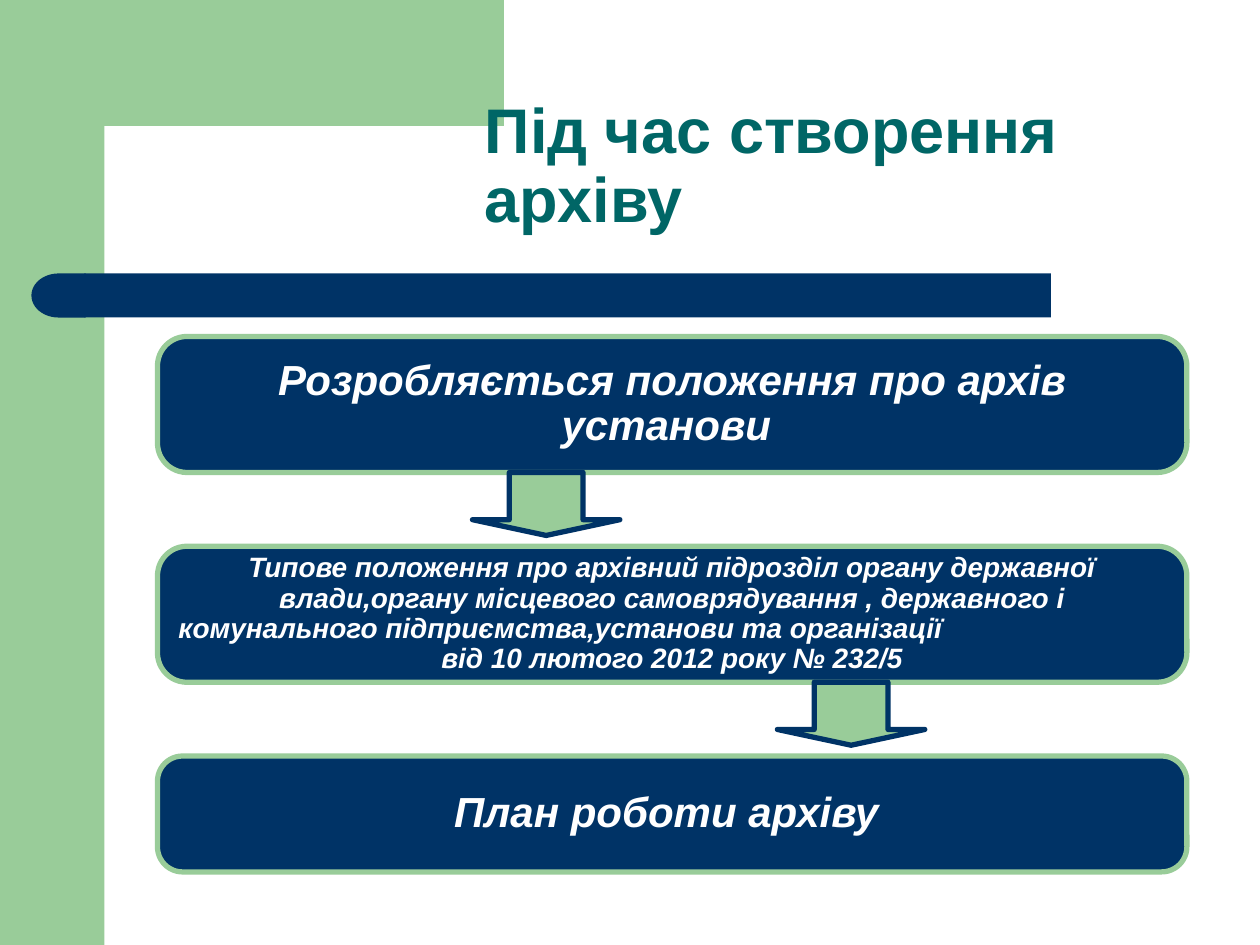
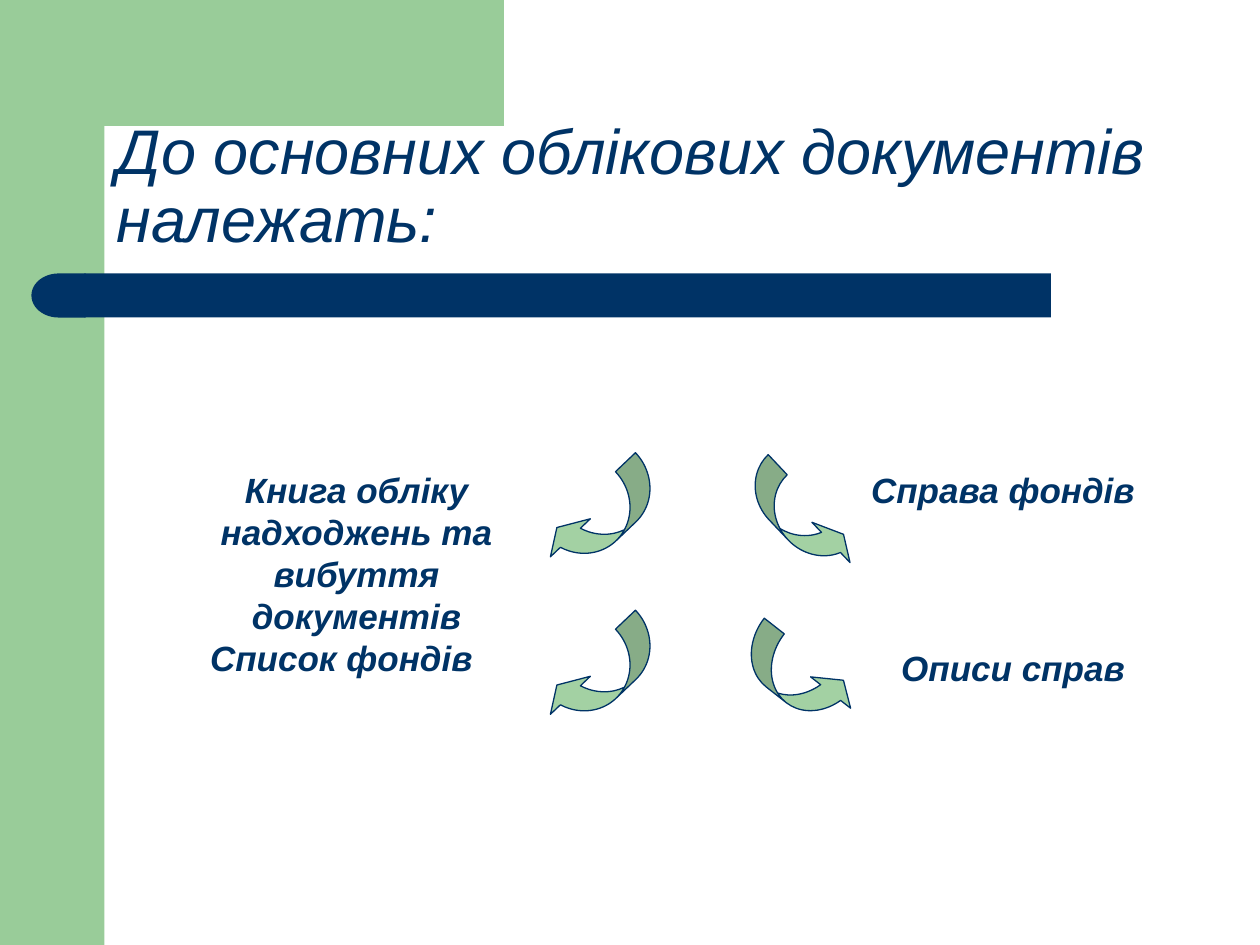
from math import cos, pi, sin

from lxml.etree import SubElement
from pptx import Presentation
from pptx.dml.color import RGBColor
from pptx.enum.shapes import MSO_SHAPE
from pptx.enum.text import MSO_ANCHOR, PP_ALIGN
from pptx.oxml.ns import qn
from pptx.util import Inches, Pt

COLORS = {"green": "99CC99", "navy": "003366", "teal": "006666", "white": "FFFFFF"}
FONT = "Arial"
WIDTH, HEIGHT = 10, 7.5
SIDE = 0.83
CORNER_RADIUS = 0.33
CENTER, LEFT = PP_ALIGN.CENTER, PP_ALIGN.LEFT

CREATION = {
    "title": "Під час створення архіву",
    "title_at": (3.75, 0.25, 5.92, 1.67),
    "title_style": {"color": "teal", "bold": True},
    "steps": [
        {"lines": [("Розробляється положення про архів установи ", CENTER)],
         "size": 24, "height": 1.08, "arrow_left": 3.75},
        {"lines": [
            ("Типове положення про архівний підрозділ органу державної влади,"
             "органу місцевого самоврядування , державного і", CENTER),
            ("комунального підприємства,установи та організації", LEFT),
            ("від 10 лютого 2012 року № 232/5", CENTER)],
         "size": 16, "height": 1.08, "arrow_left": 6.17},
        {"lines": [("План роботи архіву ", CENTER)],
         "size": 24, "height": 0.92, "arrow_left": None},
    ],
}
STEP_LEFT, STEP_TOP, STEP_WIDTH, STEP_PITCH = 1.25, 2.67, 8.17, 1.665
STEP_ARROW = (1.17, 0.5)

RECORDS = {
    "title": "До основних облікових документів належать:",
    "title_at": (SIDE, 0.83, 9.17, 1.25),
    "title_style": {"color": "navy", "italic": True},
    "documents": [
        {"name": "Книга обліку надходжень та вибуття документів",
         "at": (1.33, 3.67, 3, 0.67), "arrow_at": (4.59, 3.57, 0.4, 1.08),
         "turn": 46.4, "bend": 0.547, "mirrored": False},
        {"name": "Список фондів",
         "at": (1, 5, 3.42, 1), "arrow_at": (4.59, 4.82, 0.4, 1.08),
         "turn": 46.4, "bend": 0.547, "mirrored": False},
        {"name": "Справа фондів",
         "at": (6.17, 3.67, 3.58, 0.58), "arrow_at": (6.17, 3.58, 0.35, 1.09),
         "turn": 316.6, "bend": 0.628, "mirrored": True},
        {"name": "Описи справ",
         "at": (6.25, 5.08, 3.58, 0.42), "arrow_at": (6.12, 4.88, 0.42, 1),
         "turn": 308.1, "bend": 0.48, "mirrored": True},
    ],
}


def rgb(color):
    return RGBColor.from_string(COLORS[color])


def paint(shape, fill, line=None, line_width=0):
    shape.shadow.inherit = False
    shape.fill.solid()
    shape.fill.fore_color.rgb = rgb(fill)
    if line:
        shape.line.color.rgb = rgb(line)
        shape.line.width = Pt(line_width)
    else:
        shape.line.fill.background()


def add_figure(slide, kind, at, fill, line=None, line_width=0, adjustments=()):
    figure = slide.shapes.add_shape(kind, *map(Inches, at))
    paint(figure, fill, line, line_width)
    for index, value in enumerate(adjustments):
        figure.adjustments[index] = value
    return figure


def mirror(shape):
    shape._element.spPr.find(qn("a:xfrm")).set("flipH", "1")


def write(shape, lines, size, color, anchor, bold=False, italic=False, spacing=None):
    frame = shape.text_frame
    frame.word_wrap = True
    frame.vertical_anchor = anchor
    frame.text = "\n".join(text for text, _ in lines)
    for paragraph, (_, align) in zip(frame.paragraphs, lines):
        paragraph.alignment = align
        paragraph.line_spacing = spacing
        for run in paragraph.runs:
            run.font.name = FONT
            run.font.size = Pt(size)
            run.font.color.rgb = rgb(color)
            run.font.bold = bold
            run.font.italic = italic


def add_text(slide, at, *args, **style):
    write(slide.shapes.add_textbox(*map(Inches, at)), *args, **style)


def add_frame(slide):
    add_figure(slide, MSO_SHAPE.RECTANGLE, (0, 0, SIDE, HEIGHT), "green")
    center = SIDE + CORNER_RADIUS
    angles = [pi / 2 * step / 12 for step in range(13)]
    arc = [(center - CORNER_RADIUS * sin(a), center - CORNER_RADIUS * cos(a)) for a in angles]
    outline = [(3.5, 0), (3.5, SIDE), *arc, (SIDE, 1.28), (0.5, 1.28), (0.5, 0)]
    builder = slide.shapes.build_freeform(*outline[0], scale=Inches(1))
    builder.add_line_segments(outline[1:], close=True)
    paint(builder.convert_to_shape(), "green")
    add_figure(slide, MSO_SHAPE.RECTANGLE, (0.67, 2.17, 7.67, 0.35), "navy")
    mirror(add_figure(slide, MSO_SHAPE.FLOWCHART_DELAY, (0.25, 2.17, 0.43, 0.35), "navy"))


def start_slide(deck, content):
    slide = deck.slides.add_slide(deck.slide_layouts[6])
    add_frame(slide)
    add_text(slide, content["title_at"], [(content["title"], LEFT)], 36,
             anchor=MSO_ANCHOR.BOTTOM, spacing=0.9, **content["title_style"])
    return slide


def build_creation(deck):
    slide = start_slide(deck, CREATION)
    for index, step in enumerate(CREATION["steps"]):
        top = STEP_TOP + index * STEP_PITCH
        box = add_figure(slide, MSO_SHAPE.ROUNDED_RECTANGLE,
                         (STEP_LEFT, top, STEP_WIDTH, step["height"]),
                         "navy", "green", 3, [0.217])
        write(box, step["lines"], step["size"], "white", MSO_ANCHOR.MIDDLE,
              bold=True, italic=True, spacing=0.9)
        if step["arrow_left"] is not None:
            add_figure(slide, MSO_SHAPE.DOWN_ARROW,
                       (step["arrow_left"], top + step["height"], *STEP_ARROW),
                       "green", "navy", 3, [0.5, 0.25])


def build_records(deck):
    slide = start_slide(deck, RECORDS)
    for document in RECORDS["documents"]:
        bend = document["bend"]
        arrow = add_figure(slide, MSO_SHAPE.CURVED_LEFT_ARROW, document["arrow_at"],
                           "green", "navy", 0.75, [bend, 2 * bend, 0.333])
        arrow.rotation = document["turn"]
        if document["mirrored"]:
            mirror(arrow)
        tint = arrow._element.spPr.find(qn("a:solidFill")).find(qn("a:srgbClr"))
        SubElement(tint, qn("a:alpha")).set("val", "90000")
        add_text(slide, document["at"], [(document["name"], CENTER)], 20, "navy",
                 MSO_ANCHOR.TOP, bold=True, italic=True)


def main():
    deck = Presentation()
    deck.slide_width, deck.slide_height = Inches(WIDTH), Inches(HEIGHT)
    build_creation(deck)
    build_records(deck)
    deck.save("out.pptx")


if __name__ == "__main__":
    main()
